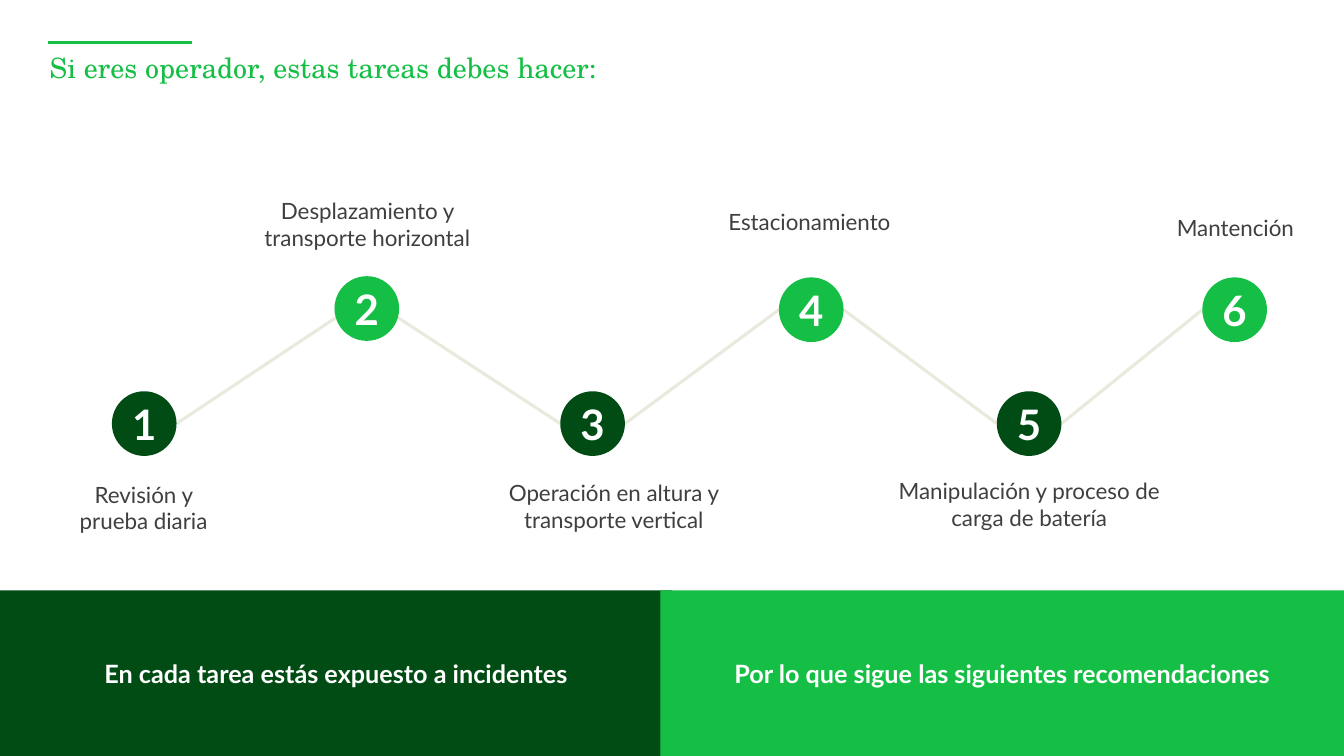
import collections

import pptx
import pptx.dml.color
import pptx.enum.shapes
import pptx.enum.text
import pptx.oxml
import pptx.util

Cm = pptx.util.Cm
Shapes = pptx.enum.shapes.MSO_SHAPE
Align = pptx.enum.text.PP_ALIGN
Anchor = pptx.enum.text.MSO_ANCHOR

COLOURS = {
    "dark": "004C14",
    "bright": "15BF45",
    "path": "E9EADD",
    "body": "3F3F3F",
    "white": "FFFFFF",
}
BODY_FONT = "Lato"
TITLE_FONT = "TeX Gyre Schola"
WIDTH, HEIGHT = 33.87, 19.05
CIRCLE = 1.63

# Circle left and top, label box and line ends tucked under the circle, in cm
Step = collections.namedtuple("Step", "text colour left top label tuck")
STEPS = [
    Step("Revisión y prueba diaria", "dark", 2.82, 9.86, (1.22, 11.99, 4.8, 1.63), 0),
    Step("Desplazamiento y transporte horizontal", "bright", 8.43, 6.96,
         (5.87, 4.85, 6.78, 1.63), 0.38),
    Step("Operación en altura y transporte vertical", "dark", 14.12, 9.86,
         (12.32, 11.96, 6.3, 1.63), 0),
    Step("Estacionamiento", "bright", 19.63, 6.99, (17.81, 5.13, 5.18, 0.94), 0),
    Step("Manipulación y proceso de carga de batería", "dark", 25.12, 9.86,
         (22.28, 11.89, 7.32, 1.63), 0),
    Step("Mantención", "bright", 30.3, 6.99, (29.13, 5.26, 4.01, 0.94), 0),
]


def rgb(name):
    return pptx.dml.color.RGBColor.from_string(COLOURS[name])


def write(shape, text, size, colour, font=BODY_FONT, bold=False, align=Align.CENTER):
    frame = shape.text_frame
    frame.text = text
    frame.word_wrap = True
    para = frame.paragraphs[0]
    para.alignment = align
    for span in para.runs:
        span.font.name = font
        span.font.size = pptx.util.Pt(size)
        span.font.bold = bold
        span.font.color.rgb = rgb(colour)
    return frame


def clear_margins(frame):
    frame.margin_left = frame.margin_right = 0
    frame.margin_top = frame.margin_bottom = 0


def add_filled(page, kind, box, colour):
    shape = page.shapes.add_shape(kind, *map(Cm, box))
    shape.shadow.inherit = False
    shape.fill.solid()
    shape.fill.fore_color.rgb = rgb(colour)
    shape.line.fill.background()
    return shape


def add_line(page, start, end, colour, weight):
    line = page.shapes.add_connector(
        pptx.enum.shapes.MSO_CONNECTOR.STRAIGHT, *map(Cm, start + end))
    line.line.color.rgb = rgb(colour)
    line.line.width = pptx.util.Pt(weight)
    properties = line._element.spPr
    properties.append(properties.makeelement(pptx.oxml.ns.qn("a:effectLst"), {}))


def add_heading(page, box):
    left, top, width, height = box
    add_line(page, (left, top), (left + 3.61, top), "bright", 1.75)
    title = page.shapes.title
    title.left, title.top = Cm(left + 0.03), Cm(top + 0.3)
    title.width, title.height = Cm(width), Cm(height)
    frame = write(title, "Si eres operador, estas tareas debes hacer:", 20,
                  "bright", TITLE_FONT, align=Align.LEFT)
    frame.vertical_anchor = Anchor.TOP
    frame.auto_size = pptx.enum.text.MSO_AUTO_SIZE.NONE
    frame.paragraphs[0].line_spacing = 0.9
    clear_margins(frame)


def add_path(page, steps):
    for step, following in zip(steps, steps[1:]):
        start = (step.left + CIRCLE - step.tuck, step.top + CIRCLE / 2)
        end = (following.left + following.tuck, following.top + CIRCLE / 2)
        add_line(page, start, end, "path", 2.25)


def add_step(page, number, step):
    circle = add_filled(page, Shapes.OVAL, (step.left, step.top, CIRCLE, CIRCLE),
                        step.colour)
    frame = write(circle, str(number), 30, "white", bold=True)
    frame.vertical_anchor = Anchor.MIDDLE
    clear_margins(frame)
    label = page.shapes.add_textbox(*map(Cm, step.label))
    write(label, step.text, 16, "body")


def add_banner(page, box, text, colour):
    banner = add_filled(page, Shapes.RECTANGLE, box, colour)
    write(banner, text, 18, "white", bold=True).vertical_anchor = Anchor.MIDDLE


def main():
    deck = pptx.Presentation()
    deck.slide_width, deck.slide_height = Cm(WIDTH), Cm(HEIGHT)
    page = deck.slides.add_slide(deck.slide_layouts[5])

    # Heading with its accent line
    add_heading(page, (1.22, 1.07, 27.41, 1.45))

    # Zigzag of numbered tasks
    add_path(page, STEPS)
    for number, step in enumerate(STEPS, 1):
        add_step(page, number, step)

    # Closing messages along the bottom
    top = 14.88
    add_banner(page, (0, top, WIDTH / 2, HEIGHT - top),
               "En cada tarea estás expuesto a incidentes", "dark")
    add_banner(page, (16.64, top, WIDTH - 16.64, HEIGHT - top),
               "Por lo que sigue las siguientes recomendaciones", "bright")

    deck.save("out.pptx")


if __name__ == "__main__":
    main()
